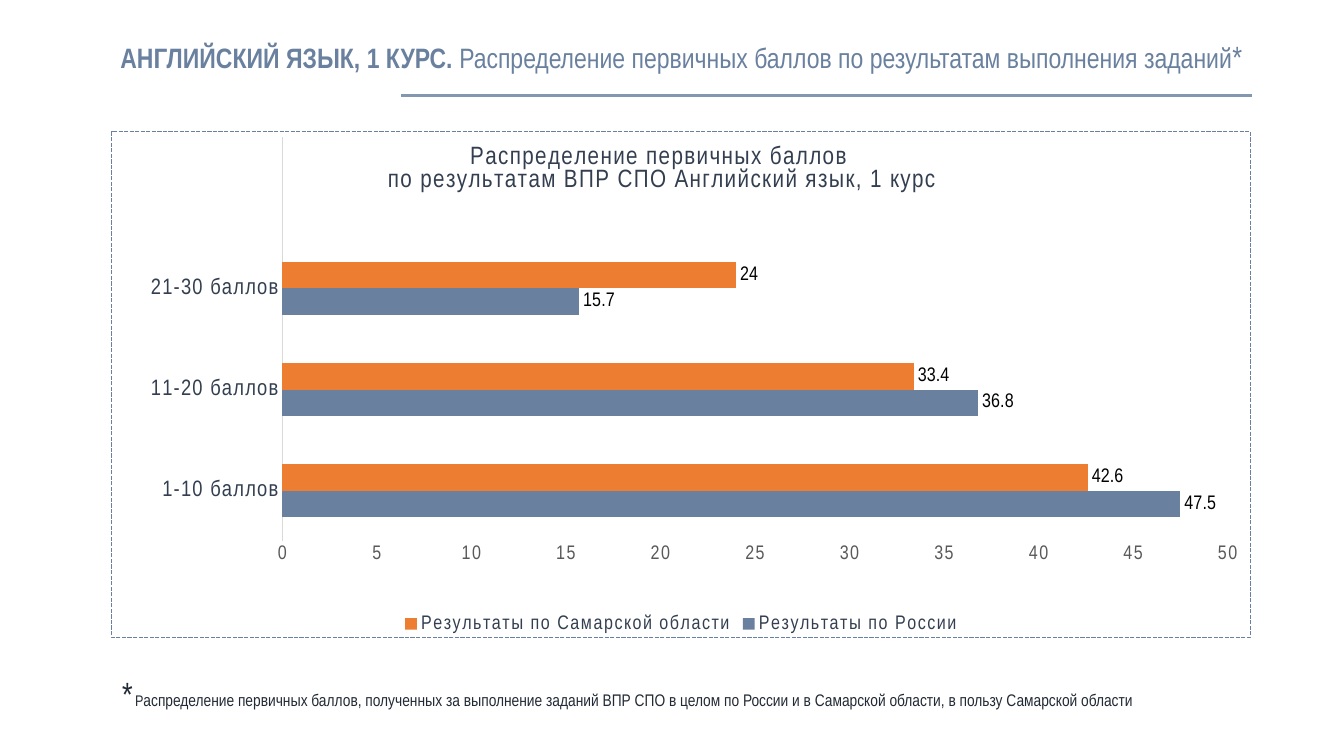
from dataclasses import dataclass

from pptx import Presentation
from pptx.chart.data import CategoryChartData
from pptx.dml.color import RGBColor
from pptx.enum.chart import XL_CHART_TYPE, XL_LABEL_POSITION, XL_LEGEND_POSITION, XL_TICK_MARK
from pptx.enum.shapes import MSO_CONNECTOR
from pptx.enum.text import MSO_ANCHOR, PP_ALIGN
from pptx.oxml import parse_xml
from pptx.oxml.ns import nsdecls, qn
from pptx.util import Inches, Pt

BAR = XL_CHART_TYPE.BAR_CLUSTERED
OUTSIDE_END = XL_LABEL_POSITION.OUTSIDE_END
BOTTOM = XL_LEGEND_POSITION.BOTTOM
NO_TICK = XL_TICK_MARK.NONE
STRAIGHT = MSO_CONNECTOR.STRAIGHT
TOP, MIDDLE = MSO_ANCHOR.TOP, MSO_ANCHOR.MIDDLE
LEFT, RIGHT, CENTER = PP_ALIGN.LEFT, PP_ALIGN.RIGHT, PP_ALIGN.CENTER

W, H = Inches(13.33), Inches(7.5)
FONT = "Arial Narrow"
COLORS = {
    "blue": "69809F", "orange": "ED7D31", "rule": "8497B0", "navy": "333F50",
    "ink": "222A35", "gray": "595959", "axis": "D9D9D9", "black": "000000",
}


@dataclass(frozen=True)
class Box:
    """A rectangle in percent of the slide's width and height."""
    x: float
    y: float
    w: float
    h: float

    def emu(self) -> tuple[int, int, int, int]:
        return tuple(int(share * side / 100) for share, side in
                     zip((self.x, self.y, self.w, self.h), (W, H, W, H)))


@dataclass(frozen=True)
class Run:
    text: str
    size: float
    bold: bool = False
    italic: bool = False
    spacing: int = 0


@dataclass(frozen=True)
class Series:
    name: str
    color: str
    values: tuple


TITLE = Box(5.25, 2.4, 87.92, 10.67)
CHART = Box(8.25, 17.33, 84.85, 67.07)
NOTE = Box(8.25, 88.4, 84.85, 6.67)
RULE = Box(29.86, 12.67, 63.31, 0)

TITLE_RUNS = [
    Run("АНГЛИЙСКИЙ ЯЗЫК, 1 КУРС. ", 20, bold=True),
    Run("Распределение первичных баллов по результатам выполнения заданий", 20),
    Run("*", 22, spacing=100),
]
NOTE_RUNS = [
    Run("*", 24, italic=True),
    Run(" ", 11, italic=True),
    Run("Р", 11),
    Run("аспределение первичных баллов, полученных за выполнение заданий ВПР СПО "
        "в целом по России и в Самарской области, в пользу Самарской области", 12),
]
CHART_TITLE = ["Распределение первичных баллов ",
               "по результатам ВПР СПО Английский язык, 1 курс"]
CATEGORIES = ["1-10 баллов", "11-20 баллов", "21-30 баллов", ""]
SERIES = [
    Series("Результаты по России", "blue", (47.5, 36.8, 15.7, None)),
    Series("Результаты по Самарской области", "orange", (42.6, 33.4, 24, None)),
]


def rgb(name: str) -> RGBColor:
    return RGBColor.from_string(COLORS[name])


def style_font(font, size: float, color: str, name: str = FONT, spacing: int = 0) -> None:
    """Format a font; spacing is in hundredths of a point."""
    font.size, font.name = Pt(size), name
    font.color.rgb = rgb(color)
    if spacing:
        font._element.set("spc", str(spacing))


def add_text(slide, box: Box, runs: list[Run], *, color: str, align=LEFT,
             anchor=TOP, line_spacing: float = 1.0) -> None:
    tf = slide.shapes.add_textbox(*box.emu()).text_frame
    tf.word_wrap, tf.vertical_anchor = True, anchor
    p = tf.paragraphs[0]
    p.alignment, p.line_spacing = align, line_spacing
    for run in runs:
        r = p.add_run()
        r.text = run.text
        r.font.bold, r.font.italic = run.bold, run.italic
        style_font(r.font, run.size, color, spacing=run.spacing)


def add_rule(slide, box: Box) -> None:
    x, y, w, h = box.emu()
    line = slide.shapes.add_connector(STRAIGHT, x, y, x + w, y + h)
    line.line.color.rgb, line.line.width = rgb("rule"), Pt(2.25)
    line._element.spPr.append(parse_xml(f"<a:effectLst {nsdecls('a')}/>"))


def set_layout(element, index: int, target: str = "", **shares: float) -> None:
    """Place a chart part by shares of the chart area."""
    for old in element.findall(qn("c:layout")):
        element.remove(old)
    inner = f'<c:layoutTarget val="{target}"/>' if target else ""
    inner += "".join(f'<c:{key}Mode val="edge"/>' for key in ("x", "y"))
    inner += "".join(f'<c:{key} val="{value}"/>' for key, value in shares.items())
    element.insert(index, parse_xml(
        f"<c:layout {nsdecls('c')}><c:manualLayout>{inner}</c:manualLayout></c:layout>"))


def add_border(chart) -> None:
    chart._chartSpace.find(qn("c:chart")).addnext(parse_xml(
        f'<c:spPr {nsdecls("c", "a")}><a:noFill/><a:ln w="{Pt(1)}"><a:solidFill>'
        f'<a:srgbClr val="{COLORS["blue"]}"/></a:solidFill>'
        '<a:prstDash val="sysDash"/></a:ln></c:spPr>'))


def add_chart_title(chart) -> None:
    title = chart.chart_title
    tf = title.text_frame
    for i, text in enumerate(CHART_TITLE):
        p = tf.add_paragraph() if i else tf.paragraphs[0]
        p.alignment = CENTER
        r = p.add_run()
        r.text = text
        r.font.bold = False
        style_font(r.font, 18, "navy", spacing=100)
    set_layout(title._element, 1, x=0.24, y=0.02)


def style_axes(chart) -> None:
    category, value = chart.category_axis, chart.value_axis
    for axis, size, color in ((category, 16, "navy"), (value, 14, "gray")):
        axis.major_tick_mark = axis.minor_tick_mark = NO_TICK
        axis.has_major_gridlines = False
        style_font(axis.tick_labels.font, size, color, spacing=100)
    category.format.line.color.rgb = rgb("axis")
    category.format.line.width = Pt(0.75)
    value.format.line.fill.background()
    value.minimum_scale, value.maximum_scale, value.major_unit = 0, 50, 5


def add_score_chart(slide, box: Box) -> None:
    data = CategoryChartData()
    data.categories = CATEGORIES
    for series in SERIES:
        data.add_series(series.name, series.values)
    chart = slide.shapes.add_chart(BAR, *box.emu(), data).chart
    style_font(chart.font, 10, "black", "Calibri")
    add_border(chart)
    add_chart_title(chart)
    style_axes(chart)

    plot = chart.plots[0]
    plot.gap_width, plot.overlap, plot.vary_by_categories = 182, 0, False
    for series, bars in zip(SERIES, plot.series):
        bars.format.fill.solid()
        bars.format.fill.fore_color.rgb = rgb(series.color)
        labels = bars.data_labels
        labels.show_value, labels.position = True, OUTSIDE_END
        style_font(labels.font, 14, "black")

    chart.has_legend = True
    chart.legend.position, chart.legend.include_in_layout = BOTTOM, False
    style_font(chart.legend.font, 14, "navy", spacing=100)
    plot_area = chart._chartSpace.find(qn("c:chart")).find(qn("c:plotArea"))
    set_layout(plot_area, 0, "inner", x=0.15, y=0.01, w=0.83, h=0.8)


def main() -> None:
    prs = Presentation()
    prs.slide_width, prs.slide_height = W, H
    slide = prs.slides.add_slide(prs.slide_layouts[6])
    add_text(slide, TITLE, TITLE_RUNS, color="blue", align=RIGHT, anchor=MIDDLE,
             line_spacing=0.9)
    add_rule(slide, RULE)
    add_text(slide, NOTE, NOTE_RUNS, color="ink")
    add_score_chart(slide, CHART)
    prs.save("out.pptx")


if __name__ == "__main__":
    main()
